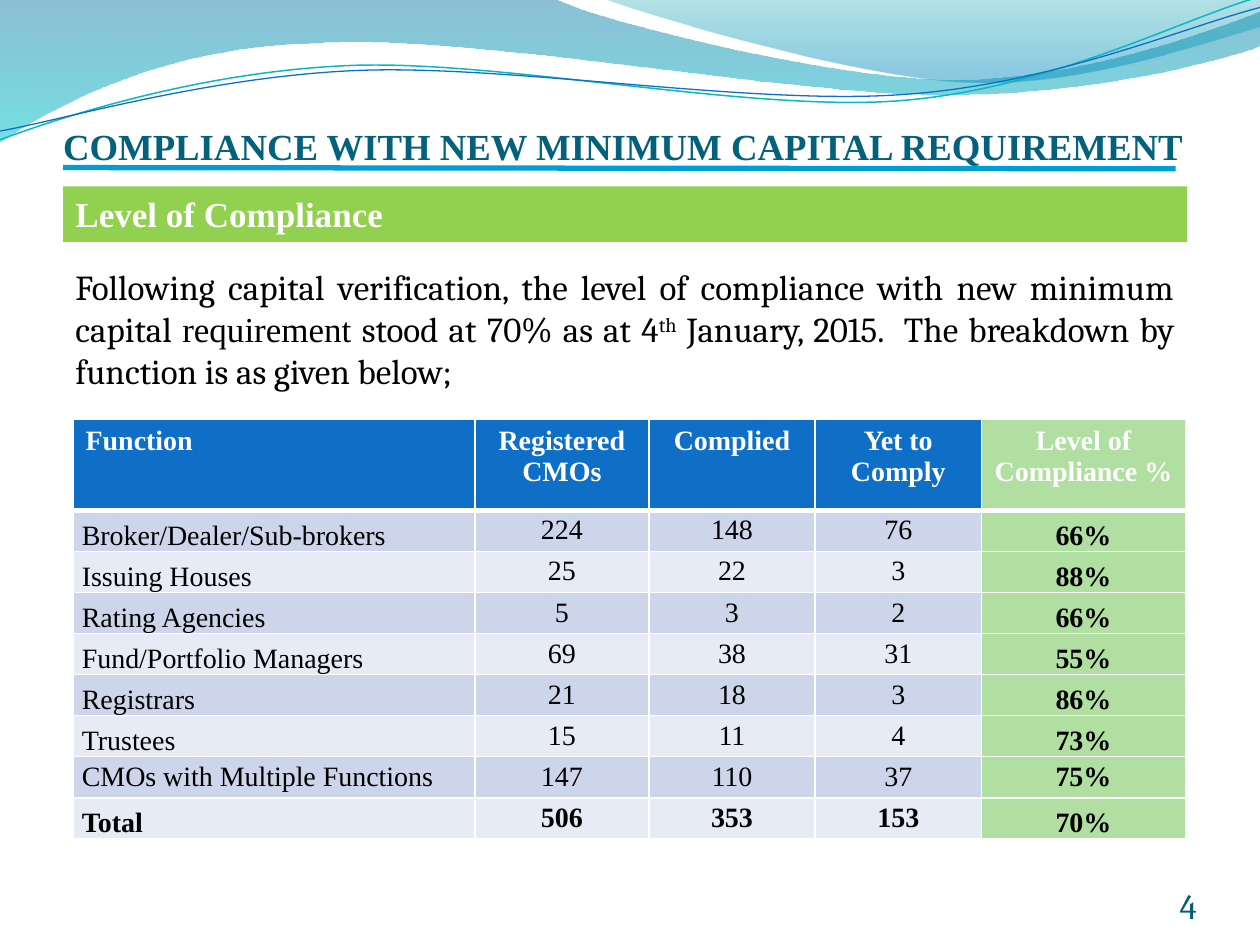
from math import cos, radians, sin

from lxml.etree import SubElement
from pptx import Presentation
from pptx.dml.color import RGBColor
from pptx.enum.shapes import MSO_CONNECTOR as Connector, MSO_SHAPE as Shape
from pptx.enum.text import MSO_ANCHOR as Anchor, MSO_AUTO_SIZE as AutoSize, PP_ALIGN as Align
from pptx.oxml.ns import qn
from pptx.util import Inches, Pt

SERIF, BODY = "Times New Roman", "Cambria"
BLUE, GREEN, BANDS = "0F6FC6", "B0DFA1", ("CCD5EA", "E7EBF5")
TILT = 2.7

BACK_WAVE = [
    [(0, 0)], [(4.4, -0.01)],
    [(4.76, 0.17), (6.64, 0.63), (7.58, 0.63)], [(8.53, 0.63), (9.58, 0.26), (10, 0.09)],
    [(10.01, 0.36)],
    [(9.83, 0.44), (8.7, 0.76), (7.46, 0.75)], [(6.22, 0.75), (3.82, 0.28), (2.57, 0.34)],
    [(1.29, 0.36), (0.46, 0.83), (-0.01, 1.13)], [(0, 0)],
]
FRONT_WAVE = [
    [(4.79, -0.01)],
    [(5.09, 0.11), (6.82, 0.62), (7.69, 0.65)], [(8.56, 0.69), (9.61, 0.32), (10, 0.21)],
    [(10, 0)], [(4.79, -0.01)],
]
TEAL_LINE = [
    [(0, 1.11)], [(0.48, 0.93), (1.58, 0.57), (2.77, 0.52)],
    [(3.95, 0.47), (5.93, 0.89), (7.13, 0.8)], [(8.33, 0.71), (9.38, 0.15), (9.98, -0.02)],
]
BLUE_LINE = [
    [(0, 1.04)], [(0.47, 0.96), (1.64, 0.61), (2.83, 0.56)],
    [(4.03, 0.51), (5.97, 0.84), (7.17, 0.75)], [(8.36, 0.67), (9.41, 0.21), (10, 0.06)],
]
HEADINGS = ("Function", "Registered CMOs", "Complied", "Yet to Comply", "Level of Compliance %")
ROWS = (
    ("Broker/Dealer/Sub-brokers", "224", "148", "76", "66%"),
    ("Issuing Houses", "25", "22", "3", "88%"),
    ("Rating Agencies", "5", "3", "2", "66%"),
    ("Fund/Portfolio Managers", "69", "38", "31", "55%"),
    ("Registrars", "21", "18", "3", "86%"),
    ("Trustees", "15", "11", "4", "73%"),
    ("CMOs with Multiple Functions", "147", "110", "37", "75%"),
    ("Total", "506", "353", "153", "70%"),
)


def color(code):
    """Turn a hex string into a colour."""
    return RGBColor.from_string(code)


def style(para, size, name, code, bold=False, align=Align.LEFT):
    """Set the font and alignment of a paragraph."""
    para.font.size, para.font.name, para.font.bold = Pt(size), name, bold
    para.font.color.rgb = color(code)
    para.alignment = align


def set_frame(frame, anchor, margins):
    """Set wrapping, anchor and left, top, right, bottom margins."""
    frame.word_wrap, frame.auto_size, frame.vertical_anchor = True, AutoSize.NONE, anchor
    (frame.margin_left, frame.margin_top,
     frame.margin_right, frame.margin_bottom) = map(Inches, margins)


def turn(point, pivot, degrees):
    """Turn a point clockwise about a pivot."""
    angle = radians(degrees)
    across, down = point[0] - pivot[0], point[1] - pivot[1]
    return (pivot[0] + across * cos(angle) - down * sin(angle),
            pivot[1] + across * sin(angle) + down * cos(angle))


def add_curve(page, curve, closed):
    """Add a freeform whose three-point parts are Bezier curves, in inches."""
    points = [(Inches(x), Inches(y)) for part in curve for x, y in part]
    builder = page.shapes.build_freeform(*points[0])
    builder.add_line_segments(points[1:], close=closed)
    shape = builder.convert_to_shape()
    shape.shadow.inherit = False
    outline = next(shape._element.iter(qn("a:path")))
    lines = iter(outline.findall(qn("a:lnTo")))
    for part in curve[1:]:
        nodes = [next(lines) for _ in part]
        if len(part) == 3:
            bezier = SubElement(outline, qn("a:cubicBezTo"))
            nodes[0].addprevious(bezier)
            for node in nodes:
                bezier.append(node[0])
                outline.remove(node)
    return shape


def add_wave(page, curve, stops):
    """Add a translucent wave shaded from top to bottom."""
    wave = add_curve(page, curve, True)
    wave.line.fill.background()
    wave.fill.gradient()
    wave.fill.gradient_angle = 270
    for stop, (position, code, _) in zip(wave.fill.gradient_stops, stops):
        stop.position = position
        stop.color.rgb = color(code)
    for node, (_, _, opacity) in zip(wave._element.spPr.iter(qn("a:srgbClr")), stops):
        SubElement(node, qn("a:alpha"), val=str(opacity * 1000))


def add_wave_line(page, curve, pivot, code, width):
    """Add a thin open curve, tilted about a pivot."""
    level = [[turn(point, pivot, TILT) for point in part] for part in curve]
    line = add_curve(page, level, False)
    line.rotation = 360 - TILT
    line.fill.background()
    line.line.color.rgb, line.line.width = color(code), Pt(width)


def add_header(page):
    """Draw the waves across the top of the page."""
    add_wave(page, BACK_WAVE, ((0, "0074A1", 45), (1, "00C6CF", 55)))
    add_wave(page, FRONT_WAVE, ((0, "00A1A9", 30), (0.8, "008BBF", 45)))
    add_wave_line(page, TEAL_LINE, (4.99, 0.57), "0AB8BF", 0.85)
    add_wave_line(page, BLUE_LINE, (5, 0.59), BLUE, 0.75)


def add_title(page, left, top, width, height):
    """Place the title and the rule under it."""
    title = page.shapes.title
    page.shapes._spTree.append(title._element)
    title.left, title.top, title.width, title.height = map(Inches, (left, top, width, height))
    set_frame(title.text_frame, Anchor.BOTTOM, (0, 0.05, 0, 0))
    title.text_frame.text = "COMPLIANCE WITH NEW MINIMUM CAPITAL REQUIREMENT"
    style(title.text_frame.paragraphs[0], 21, SERIF, "04617B", True)
    bottom = top + height
    ends = map(Inches, (left, bottom, left + 8.83, bottom + 0.01))
    rule = page.shapes.add_connector(Connector.STRAIGHT, *ends)
    rule.line.color.rgb, rule.line.width = color("009DD9"), Pt(3)
    SubElement(rule._element.spPr, qn("a:effectLst"))


def add_banner(page, *box):
    """Add the green section heading."""
    banner = page.shapes.add_shape(Shape.RECTANGLE, *map(Inches, box))
    banner.shadow.inherit = False
    banner.fill.solid()
    banner.fill.fore_color.rgb = color("92D050")
    banner.line.fill.background()
    set_frame(banner.text_frame, Anchor.TOP, (0.1, 0.05, 0.1, 0.05))
    banner.text_frame.text = "Level of Compliance"
    style(banner.text_frame.paragraphs[0], 20, SERIF, "FFFFFF", True)


def add_intro(page, *box):
    """Add the justified paragraph above the table."""
    frame = page.shapes.add_textbox(*map(Inches, box)).text_frame
    set_frame(frame, Anchor.TOP, (0.1, 0.05, 0.1, 0.05))
    para = frame.paragraphs[0]
    style(para, 20, BODY, "000000", align=Align.JUSTIFY)
    texts = ("Following capital verification, the level of compliance with new minimum capital ",
             "requirement", " stood at 70% as at 4", "th",
             " January, 2015.  The breakdown by function is as given below;")
    for text in texts:
        span = para.add_run()
        span.text = text
        if text == "requirement":
            span.font.name = SERIF
        if text == "th":
            span._r.get_or_add_rPr().set("baseline", "30000")


def set_borders(cell, top, bottom):
    """Give a cell white borders; top and bottom widths are in points."""
    props = cell._tc.get_or_add_tcPr()
    for side, width in (("L", 1), ("R", 1), ("T", top), ("B", bottom)):
        line = SubElement(props, qn(f"a:ln{side}"), w=str(Pt(width)))
        SubElement(SubElement(line, qn("a:solidFill")), qn("a:srgbClr"), val="FFFFFF")


def fill_cell(cell, text, row, column):
    """Write and format one table cell by its place."""
    heading, first, last = row == 0, column == 0, column == len(HEADINGS) - 1
    set_borders(cell, 3 if row == 1 else 1, 3 if heading else 1)
    cell.fill.solid()
    cell.fill.fore_color.rgb = color(GREEN if last else BLUE if heading else BANDS[(row - 1) % 2])
    cell.text = text
    para = cell.text_frame.paragraphs[0]
    style(para, 16, SERIF, "FFFFFF" if heading else "000000",
          heading or last or row == len(ROWS), Align.LEFT if first else Align.CENTER)
    cell.vertical_anchor = Anchor.TOP
    if not heading:
        para.line_spacing = 1.15
        cell.margin_left = cell.margin_right = Inches(0.07)
        cell.margin_top = cell.margin_bottom = 0
        if (first or last) and row != len(ROWS) - 1:
            cell.vertical_anchor = Anchor.BOTTOM


def add_compliance_table(page, left, top, width, height):
    """Add the table of compliance by function."""
    box = map(Inches, (left, top, width, height))
    table = page.shapes.add_table(len(ROWS) + 1, len(HEADINGS), *box).table
    for column, size in zip(table.columns, (3.19, 1.38, 1.32, 1.32, 1.62)):
        column.width = Inches(size)
    heading_height = 0.72
    for index, row in enumerate(table.rows):
        row.height = Inches((height - heading_height) / len(ROWS) if index else heading_height)
    for row, texts in enumerate((HEADINGS, *ROWS)):
        for column, text in enumerate(texts):
            fill_cell(table.cell(row, column), text, row, column)


def add_page_number(page, *box):
    """Add the page number at the bottom right."""
    frame = page.shapes.add_textbox(*map(Inches, box)).text_frame
    set_frame(frame, Anchor.BOTTOM, (0, 0, 0, 0))
    frame.text = "4"
    style(frame.paragraphs[0], 20, BODY, "045D75", align=Align.RIGHT)


def main():
    """Build and save the deck."""
    deck = Presentation()
    deck.slide_width, deck.slide_height = Inches(10), Inches(7.5)
    page = deck.slides.add_slide(deck.slide_layouts[5])
    add_header(page)
    add_title(page, 0.5, 0.58, 9, 0.75)
    add_page_number(page, 8.67, 6.95, 0.83, 0.4)
    add_intro(page, 0.5, 2.06, 8.92, 1.11)
    add_compliance_table(page, 0.58, 3.33, 8.83, 3.33)
    add_banner(page, 0.5, 1.48, 8.92, 0.44)
    deck.save("out.pptx")


if __name__ == "__main__":
    main()
